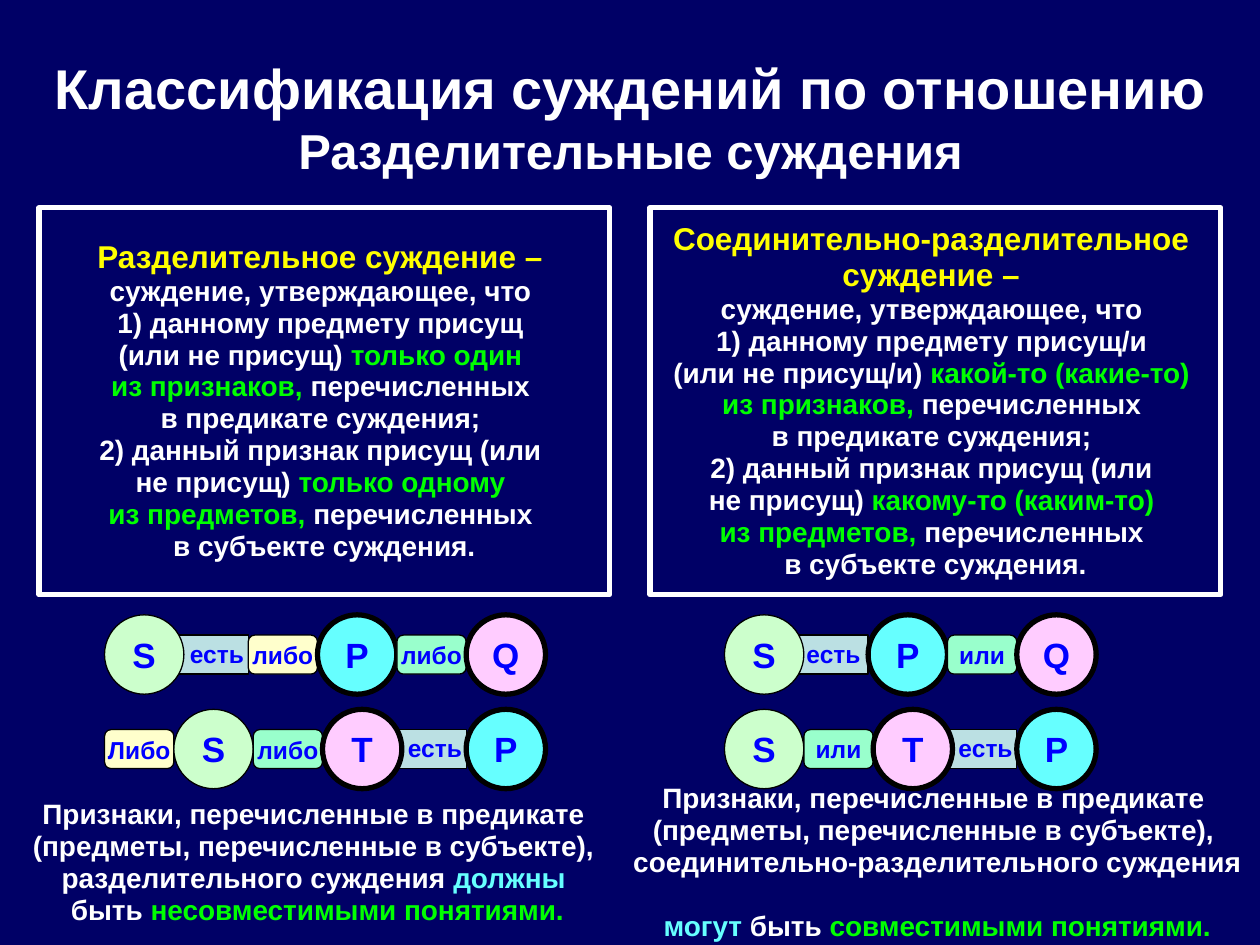
from dataclasses import dataclass
from typing import NamedTuple, Optional

from pptx import Presentation
from pptx.dml.color import RGBColor
from pptx.enum.shapes import MSO_SHAPE
from pptx.enum.text import MSO_ANCHOR, MSO_AUTO_SIZE, PP_ALIGN
from pptx.util import Pt

RECT, ELLIPSE = MSO_SHAPE.RECTANGLE, MSO_SHAPE.OVAL
ROUNDED, ALTERNATE = MSO_SHAPE.ROUNDED_RECTANGLE, MSO_SHAPE.FLOWCHART_ALTERNATE_PROCESS
MIDDLE, CENTER, NO_AUTOFIT = MSO_ANCHOR.MIDDLE, PP_ALIGN.CENTER, MSO_AUTO_SIZE.NONE

NAVY = RGBColor(0x00, 0x00, 0x66)
WHITE = RGBColor(0xFF, 0xFF, 0xFF)
BLACK = RGBColor(0x00, 0x00, 0x00)
BLUE = RGBColor(0x00, 0x00, 0xFF)
YELLOW = RGBColor(0xFF, 0xFF, 0x00)
GREEN = RGBColor(0x00, 0xFF, 0x00)
CYAN = RGBColor(0x66, 0xFF, 0xFF)
PINK = RGBColor(0xFF, 0xCC, 0xFF)
PALE_GREEN = RGBColor(0xCC, 0xFF, 0xCC)
PALE_BLUE = RGBColor(0xBB, 0xE0, 0xE3)
CREAM = RGBColor(0xFF, 0xFF, 0xCC)
MINT = RGBColor(0x99, 0xFF, 0xCC)

FONT = "Arial"
TERM_SIZE, LINK_WIDTH, LINK_HEIGHT = 45.36, 39.6, 22.32
COPULA_OVERLAP = 2.88  # the copula starts under the term before it
FIRST_ROW, SECOND_ROW = 374.04, 428.04  # vertical centres of the formulas


class Span(NamedTuple):
    text: str
    color: RGBColor = WHITE
    size: Optional[float] = None


class Area(NamedTuple):
    left: float
    top: float
    width: float
    height: float

    def points(self):
        return [Pt(length) for length in self]


@dataclass(frozen=True)
class Style:
    outline: MSO_SHAPE
    fill: RGBColor
    line: float = 0.75
    width: float = LINK_WIDTH
    height: float = LINK_HEIGHT
    font_size: float = 14
    inset_top: float = 0
    inset_bottom: float = 0
    spacing: Optional[float] = None
    overlap: float = 0


class Token(NamedTuple):
    text: str
    style: Style


class Formula(NamedTuple):
    left: float
    middle: float
    tokens: list


def term(fill: RGBColor, line: float = 3) -> Style:
    return Style(ELLIPSE, fill, line, TERM_SIZE, TERM_SIZE, 20, 3.6, 3.6)


def choice(fill: RGBColor) -> Style:
    return Style(ALTERNATE, fill, inset_top=7.2, inset_bottom=3.6, spacing=0.8)


COPULA = Style(RECT, PALE_BLUE, inset_top=2.88, inset_bottom=4.32, overlap=COPULA_OVERLAP)
JOINT = Style(ROUNDED, MINT)
S, P = Token("S", term(PALE_GREEN, 0.75)), Token("P", term(CYAN))
Q, T = Token("Q", term(PINK)), Token("T", term(PINK))
IS, OR = Token(" есть", COPULA), Token("или", JOINT)

FORMULAS = [
    Formula(59.76, FIRST_ROW, [S, IS, Token("либо", choice(CREAM)), P, Token("либо", JOINT), Q]),
    Formula(59.76, SECOND_ROW,
            [Token("Либо", choice(CREAM)), S, Token("либо", choice(MINT)), T, IS, P]),
    Formula(414, FIRST_ROW, [S, Token("есть", COPULA), P, OR, Q]),
    Formula(414, SECOND_ROW, [S, OR, T, IS, P]),
]

TITLE = [Span("Классификация суждений по отношению\n", size=32), Span("Разделительные суждения")]


def definition(name: str, ending: str, feature: str, subject: str) -> list:
    return [
        Span(f"{name} – \n", YELLOW, 18),
        Span(f"суждение, утверждающее, что \n1) данному предмету присущ{ending} \n"
             f"(или не присущ{ending}) "),
        Span(f"{feature} \nиз признаков, ", GREEN),
        Span("перечисленных \nв предикате суждения; \n"
             "2) данный признак присущ (или \nне присущ) "),
        Span(f"{subject} \nиз предметов, ", GREEN),
        Span("перечисленных \nв субъекте суждения."),
    ]


DEFINITIONS = [
    (Area(22.32, 118.8, 326.16, 221.04), True,
     definition("Разделительное суждение", "", "только один", "только одному")),
    (Area(371.52, 118.8, 326.16, 221.04), False,
     definition("Соединительно-разделительное \nсуждение", "/и",
                "какой-то (какие-то)", "какому-то (каким-то)")),
]

CAPTION_START = "Признаки, перечисленные в предикате \n(предметы, перечисленные в субъекте), \n"
CAPTIONS = [
    (Area(8.64, 450.72, 345.6, 84.96),
     [Span(CAPTION_START + "разделительного суждения "), Span("должны \n", CYAN),
      Span("быть "), Span("несовместимыми понятиями.", GREEN)]),
    (Area(357.12, 450.72, 357.12, 84.96),
     [Span(CAPTION_START + "соединительно-разделительного суждения \n"), Span("могут", CYAN),
      Span(" быть "), Span("совместимыми понятиями.", GREEN)]),
]


def write(frame, spans: list, size: float, spacing: Optional[float] = None,
          wrap: bool = True) -> None:
    frame.auto_size = NO_AUTOFIT
    frame.word_wrap = wrap
    frame.vertical_anchor = MIDDLE
    paragraph = frame.paragraphs[0]
    paragraph.alignment = CENTER
    if spacing:
        paragraph.line_spacing = spacing
    paragraph.font.name, paragraph.font.size, paragraph.font.bold = FONT, Pt(size), True
    for span in spans:
        for number, line in enumerate(span.text.split("\n")):
            if number:
                paragraph.add_line_break()
            if line:
                run = paragraph.add_run()
                run.text = line
                run.font.color.rgb = span.color
                if span.size:
                    run.font.size = Pt(span.size)


def draw_definition(slide, area: Area, wrap: bool, spans: list) -> None:
    box = slide.shapes.add_shape(RECT, *area.points())
    box.shadow.inherit = False
    box.fill.background()
    box.line.color.rgb, box.line.width = WHITE, Pt(3)
    write(box.text_frame, spans, 16, 0.95, wrap)


def draw_caption(slide, area: Area, spans: list) -> None:
    frame = slide.shapes.add_textbox(*area.points()).text_frame
    frame.margin_left = frame.margin_right = Pt(2.88)
    write(frame, spans, 16, 0.95)


def draw_token(slide, token: Token, left: float, middle: float) -> None:
    style = token.style
    area = Area(left, middle - style.height / 2, style.width, style.height)
    node = slide.shapes.add_shape(style.outline, *area.points())
    node.shadow.inherit = False
    node.fill.solid()
    node.fill.fore_color.rgb = style.fill
    node.line.color.rgb, node.line.width = BLACK, Pt(style.line)
    frame = node.text_frame
    frame.margin_top, frame.margin_bottom = Pt(style.inset_top), Pt(style.inset_bottom)
    write(frame, [Span(token.text, BLUE)], style.font_size, style.spacing, wrap=False)


def draw_formula(slide, formula: Formula, copulas: bool) -> None:
    """Draw either the copulas or all other tokens of a formula."""
    left = formula.left
    for token in formula.tokens:
        left -= token.style.overlap
        if (token.style is COPULA) == copulas:
            draw_token(slide, token, left, formula.middle)
        left += token.style.width


def main() -> None:
    deck = Presentation()
    deck.slide_width, deck.slide_height = Pt(720), Pt(540)
    slide = deck.slides.add_slide(deck.slide_layouts[5])
    slide.background.fill.solid()
    slide.background.fill.fore_color.rgb = NAVY

    # Title
    title = slide.shapes.title
    title.left, title.top, title.width, title.height = Area(7.92, 21.6, 704.88, 90).points()
    write(title.text_frame, TITLE, 28)

    # Copulas lie behind everything else
    for formula in FORMULAS:
        draw_formula(slide, formula, copulas=True)

    # Definitions and the captions below them
    for area, wrap, spans in DEFINITIONS:
        draw_definition(slide, area, wrap, spans)
    for area, spans in CAPTIONS:
        draw_caption(slide, area, spans)

    # Terms and conjunctions
    for formula in FORMULAS:
        draw_formula(slide, formula, copulas=False)

    deck.save("out.pptx")


if __name__ == "__main__":
    main()
